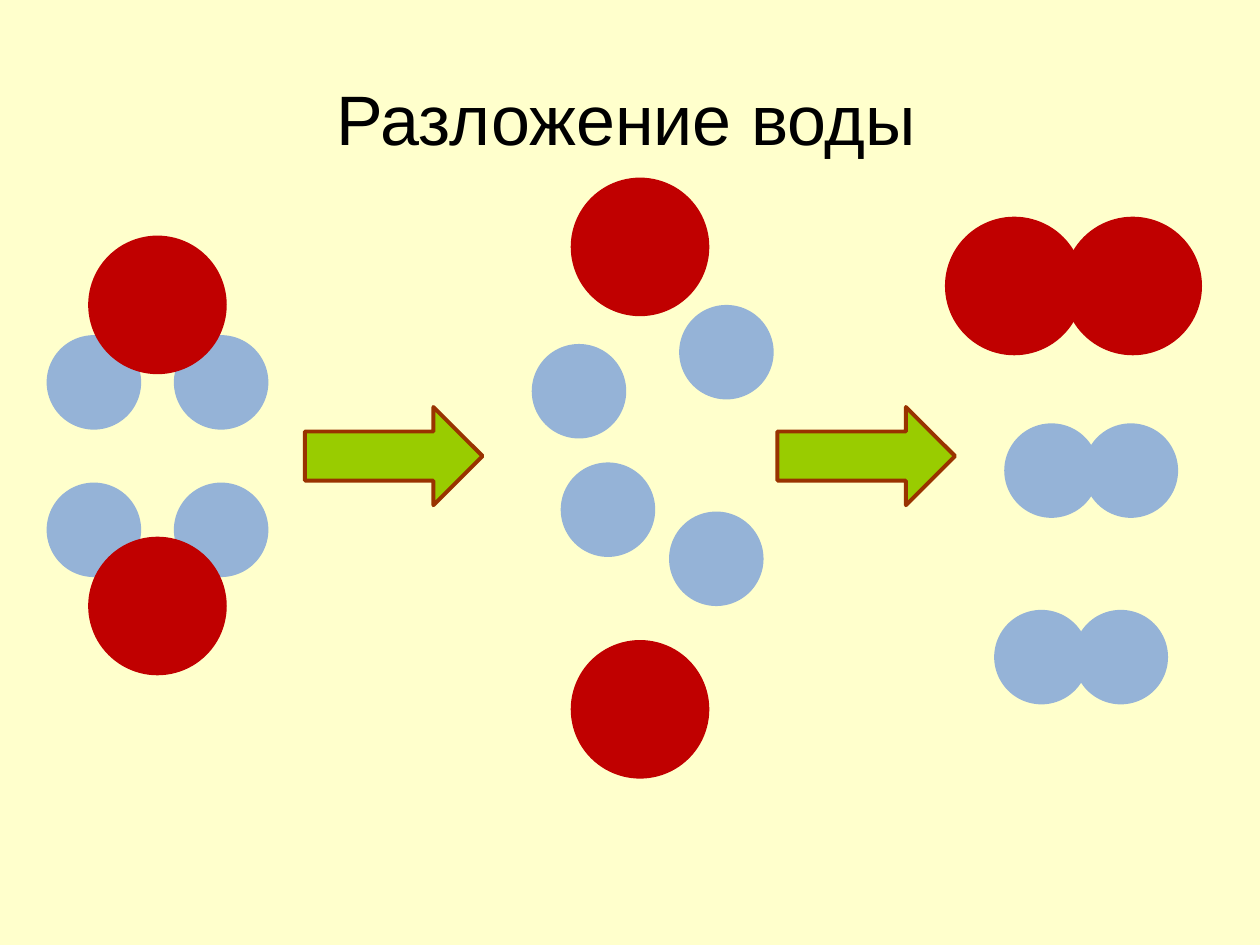
from pptx import Presentation
from pptx.dml.color import RGBColor
from pptx.enum.shapes import MSO_SHAPE
from pptx.enum.text import MSO_ANCHOR, PP_ALIGN
from pptx.util import Inches, Pt

COLORS = {
    "background": "FFFFCC",
    "title": "000000",
    "oxygen": "C00000",
    "hydrogen": "95B3D7",
    "arrow": "99CC00",
    "arrow_edge": "993300",
}
DIAMETER = {"oxygen": 1.1, "hydrogen": 0.75}
TITLE_FONT = {"name": "Arial", "size": Pt(40), "bold": False}


def color(name):
    return RGBColor.from_string(COLORS[name])


def add_filled(slide, preset, box, fill):
    shape = slide.shapes.add_shape(preset, *map(Inches, box))
    shape.shadow.inherit = False
    shape.fill.solid()
    shape.fill.fore_color.rgb = color(fill)
    return shape


def add_atom(slide, element, left, top):
    size = DIAMETER[element]
    atom = add_filled(slide, MSO_SHAPE.OVAL, (left, top, size, size), element)
    atom.line.fill.background()


def add_title(slide, left, top, width, height):
    title = slide.shapes.title
    title.left, title.top = Inches(left), Inches(top)
    title.width, title.height = Inches(width), Inches(height)
    frame = title.text_frame
    frame.text = "Разложение воды"
    frame.vertical_anchor = MSO_ANCHOR.MIDDLE
    heading = frame.paragraphs[0]
    heading.alignment = PP_ALIGN.CENTER
    font = heading.runs[0].font
    for attribute, value in TITLE_FONT.items():
        setattr(font, attribute, value)
    font.color.rgb = color("title")


def add_water(slide, left, top, oxygen_dy, hydrogen_dy):
    """Water molecule: two hydrogen atoms behind one oxygen atom."""
    for dx in (0, 1.01):
        add_atom(slide, "hydrogen", left + dx, top + hydrogen_dy)
    add_atom(slide, "oxygen", left + 0.33, top + oxygen_dy)


def add_reaction_arrow(slide, left, top):
    arrow = add_filled(slide, MSO_SHAPE.RIGHT_ARROW, (left, top, 1.41, 0.78), "arrow")
    arrow.line.color.rgb = color("arrow_edge")
    arrow.line.width = Pt(2.25)


def add_free_atoms(slide, left, top):
    for dx, dy in ((0.31, 0), (0.31, 3.67)):
        add_atom(slide, "oxygen", left + dx, top + dy)
    for dx, dy in ((0, 1.32), (1.17, 1.01), (0.23, 2.26), (1.09, 2.65)):
        add_atom(slide, "hydrogen", left + dx, top + dy)


def add_gas_molecule(slide, element, left, top, spacing):
    """Gas molecule: two overlapping atoms of one element."""
    for dx in (0, spacing):
        add_atom(slide, element, left + dx, top)


def main():
    prs = Presentation()
    prs.slide_width, prs.slide_height = Inches(10), Inches(7.5)
    slide = prs.slides.add_slide(prs.slide_layouts[5])
    slide.background.fill.solid()
    slide.background.fill.fore_color.rgb = color("background")

    add_title(slide, 0.47, 0.31, 9, 1.25)

    # Water molecules, the lower one mirrored
    add_water(slide, 0.37, 1.87, oxygen_dy=0, hydrogen_dy=0.79)
    add_water(slide, 0.37, 3.83, oxygen_dy=0.43, hydrogen_dy=0)

    # Reaction steps
    for left in (2.42, 6.17):
        add_reaction_arrow(slide, left, 3.23)

    # Separate atoms
    add_free_atoms(slide, 4.22, 1.41)

    # Oxygen and hydrogen gas
    add_gas_molecule(slide, "oxygen", 7.5, 1.72, 0.94)
    for left, top in ((7.97, 3.36), (7.89, 4.84)):
        add_gas_molecule(slide, "hydrogen", left, top, 0.63)

    prs.save("out.pptx")


if __name__ == "__main__":
    main()
